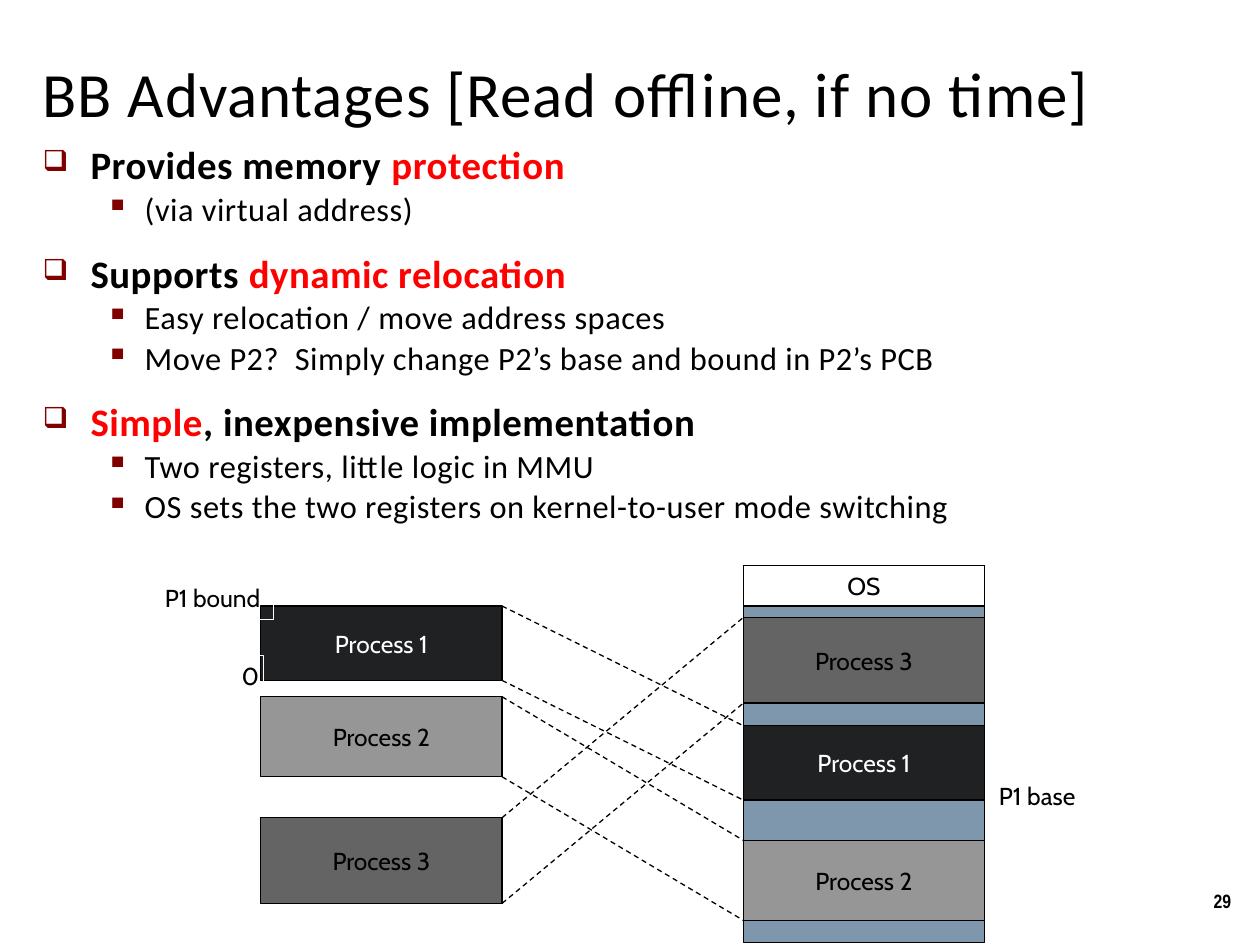
from lxml import etree
from pptx import Presentation
from pptx.dml.color import RGBColor
from pptx.enum.dml import MSO_LINE
from pptx.enum.shapes import MSO_CONNECTOR, MSO_SHAPE
from pptx.enum.text import MSO_ANCHOR, PP_ALIGN
from pptx.oxml.ns import qn
from pptx.util import Inches, Pt

RECTANGLE, STRAIGHT, DASH = MSO_SHAPE.RECTANGLE, MSO_CONNECTOR.STRAIGHT, MSO_LINE.DASH
TOP, MIDDLE, BOTTOM = MSO_ANCHOR.TOP, MSO_ANCHOR.MIDDLE, MSO_ANCHOR.BOTTOM
LEFT, CENTER, RIGHT = PP_ALIGN.LEFT, PP_ALIGN.CENTER, PP_ALIGN.RIGHT

BLACK = RGBColor(0x00, 0x00, 0x00)
WHITE = RGBColor(0xFF, 0xFF, 0xFF)
RED = RGBColor(0xFF, 0x00, 0x00)
STEEL = RGBColor(0x7E, 0x97, 0xAD)
CHARCOAL = RGBColor(0x1F, 0x21, 0x23)
SILVER = RGBColor(0x96, 0x96, 0x96)
GRAY = RGBColor(0x64, 0x64, 0x64)

deck = Presentation()
deck.slide_width, deck.slide_height = Inches(10), Inches(7.5)
page = deck.slides.add_slide(deck.slide_layouts[6])
CELL = deck.slide_width / 100


def add_box(left, top, width, height, fill=None, line=None, anchor=MIDDLE, wrap=False):
    place = [round(CELL * cells) for cells in (left, top, width, height)]
    box = page.shapes.add_shape(RECTANGLE, *place) if line else page.shapes.add_textbox(*place)
    if line:
        box.shadow.inherit = False
        box.line.color.rgb = line
        box.line.width = Pt(0.75)
        if fill:
            box.fill.solid()
            box.fill.fore_color.rgb = fill
        else:
            box.fill.background()
    box.text_frame.word_wrap = wrap
    box.text_frame.vertical_anchor = anchor
    return box


def add_span(para, text, color=BLACK, spacing=0, **formats):
    span = para.add_run()
    span.text = text
    span.font.color.rgb = color
    for key, value in formats.items():
        setattr(span.font, key, value)
    if spacing:
        span.font._element.set("spc", str(spacing))


title = add_box(2.4, 3.1, 95.1, 7.7, anchor=BOTTOM, wrap=True)
add_span(title.text_frame.paragraphs[0], "BB Advantages [Read offline, if no time]",
         spacing=50, name="Calibri", size=Pt(36))

number = add_box(87.9, 69.5, 10.8, 4, wrap=True).text_frame.paragraphs[0]
number.alignment = RIGHT
add_span(number, "29", name="Arial Narrow", size=Pt(11), bold=True)

LEVELS = [
    {"mark": "❑", "scale": 75, "margin": 0.38, "hang": 0.38, "before": 15, "size": 22.2},
    {"mark": "▪", "scale": 100, "margin": 0.81, "hang": 0.31, "before": 3, "size": 18.5},
]
POINTS = [
    (0, [("Provides memory ", BLACK), ("protection", RED)]),
    (1, [("(via virtual address)", BLACK)]),
    (0, [("Supports ", BLACK), ("dynamic relocation", RED)]),
    (1, [("Easy relocation / move address spaces", BLACK)]),
    (1, [("Move P2?  Simply change P2’s base and bound in P2’s PCB", BLACK)]),
    (0, [("Simple", RED), (", inexpensive implementation", BLACK)]),
    (1, [("Two registers, little logic in MMU", BLACK)]),
    (1, [("OS sets the two registers on kernel-to-user mode switching", BLACK)]),
]
body = add_box(2.4, 11.1, 95.1, 32.2, anchor=TOP, wrap=True).text_frame
for index, (level, spans) in enumerate(POINTS):
    style = LEVELS[level]
    para = body.add_paragraph() if index else body.paragraphs[0]
    formats = {"level": level, "line_spacing": 0.9, "space_before": Pt(style["before"])}
    for key, value in formats.items():
        setattr(para, key, value)
    props = para._p.get_or_add_pPr()
    props.set("marL", str(Inches(style["margin"])))
    props.set("indent", str(-Inches(style["hang"])))
    tint = etree.SubElement(props, qn("a:buClr"))
    etree.SubElement(tint, qn("a:srgbClr"), val="800000")
    etree.SubElement(props, qn("a:buSzPct"), val=str(style["scale"] * 1000))
    etree.SubElement(props, qn("a:buChar"), char=style["mark"])
    for text, color in spans:
        add_span(para, text, color, 30, name="Calibri", size=Pt(style["size"]), bold=level == 0)

VIRTUAL, PHYSICAL, BLOCK = 20.7, 59, 19.15
PROCESSES = [
    ("Process 1", 48.1, 57.6, 5.9, CHARCOAL, WHITE),
    ("Process 2", 55.3, 66.7, 6.35, SILVER, BLACK),
    ("Process 3", 64.9, 49, 6.8, GRAY, BLACK),
]
add_box(PHYSICAL, 44.9, BLOCK, 29.9, STEEL, BLACK)
blocks = [("OS", PHYSICAL, 44.9, 3.2, WHITE, BLACK)]
for name, virtual_top, physical_top, height, fill, ink in PROCESSES:
    blocks.append((name, VIRTUAL, virtual_top, height, fill, ink))
    blocks.append((name, PHYSICAL, physical_top, height, fill, ink))
for name, left, top, height, fill, ink in blocks:
    para = add_box(left, top, BLOCK, height, fill, BLACK).text_frame.paragraphs[0]
    para.alignment = CENTER
    add_span(para, name, ink, name="Cabin", size=Pt(14))

for name, virtual_top, physical_top, height, fill, ink in PROCESSES:
    for edge in (0, height):
        ends = (VIRTUAL + BLOCK, virtual_top + edge, PHYSICAL, physical_top + edge)
        link = page.shapes.add_connector(STRAIGHT, *[round(CELL * cells) for cells in ends])
        link.line.color.rgb = BLACK
        link.line.width = Pt(0.75)
        link.line.dash_style = DASH
        etree.SubElement(link._element.spPr, qn("a:effectLst"))

LABELS = [
    ("P1 bound", 12.1, 45.8, 9.6, 3.4),
    ("0", 18.2, 52, 2.7, 2.6),
    ("P1 base", 78.3, 61.5, 8.1, 3.4),
]
for text, *place in LABELS:
    para = add_box(*place, line=WHITE, anchor=TOP).text_frame.paragraphs[0]
    para.alignment = LEFT
    add_span(para, text, name="Cabin", size=Pt(14))

deck.save("out.pptx")
